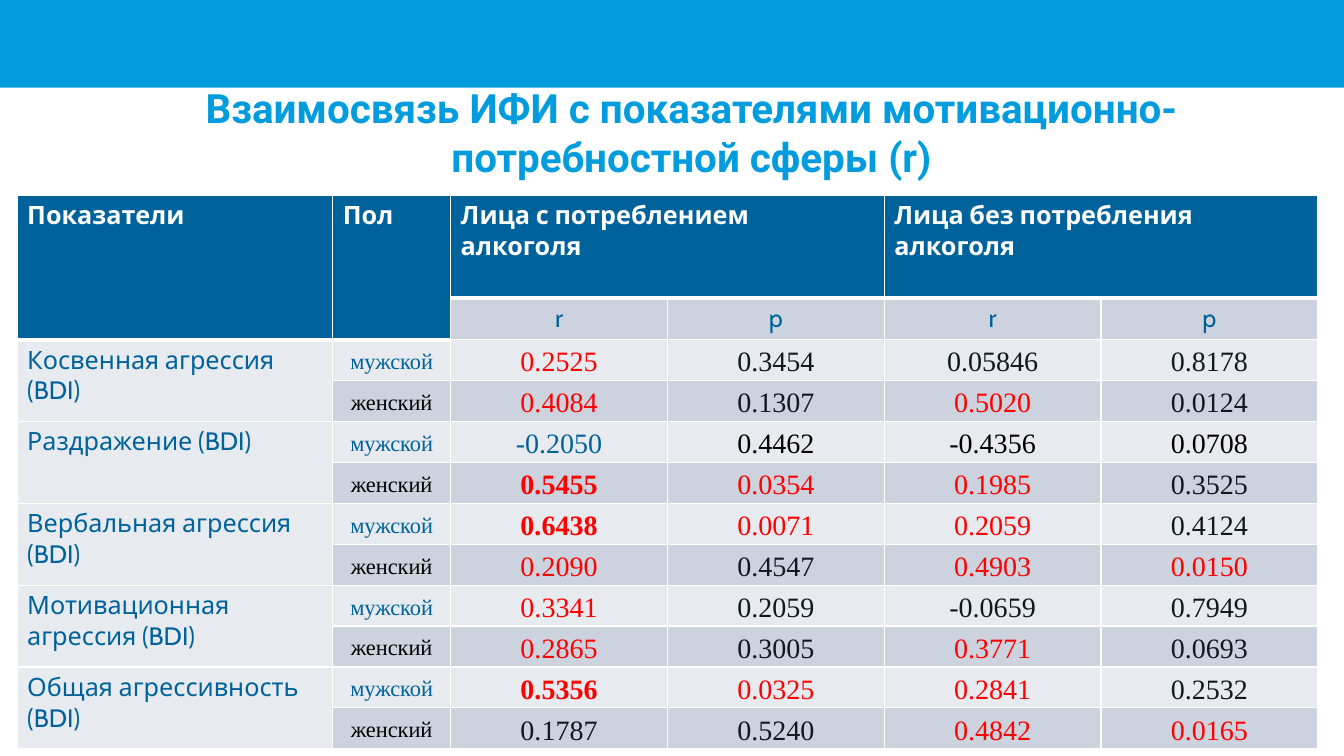
from lxml.etree import SubElement
from pptx import Presentation
from pptx.dml.color import RGBColor
from pptx.enum.shapes import MSO_SHAPE
from pptx.enum.text import MSO_ANCHOR, PP_ALIGN
from pptx.oxml.ns import qn
from pptx.util import Inches, Pt

SKY = RGBColor(0x00, 0x9C, 0xDE)
NAVY = RGBColor(0x00, 0x62, 0x9B)
WHITE = RGBColor(0xFF, 0xFF, 0xFF)
LIGHT = RGBColor(0xE7, 0xEA, 0xEF)
GREY = RGBColor(0xCC, 0xD3, 0xDE)
RED = RGBColor(0xFF, 0x00, 0x00)
DARK = RGBColor(0x10, 0x18, 0x20)
BLACK = RGBColor(0x00, 0x00, 0x00)

VALUE_COLORS = {"R": RED, "B": RED, "D": DARK, "K": BLACK, "N": NAVY}
COLUMN_WIDTHS = [3.13, 1.17] + [2.15] * 4
ROW_HEIGHTS = [1.02, 0.41] + [0.406] * 10
HEADERS = [
    ("Показатели", 0, (1, 0)),
    ("Пол", 1, (1, 1)),
    ("Лица с потреблением алкоголя", 2, (0, 3)),
    ("Лица без потребления алкоголя", 4, (0, 5)),
]
INDICATORS = [
    ("Косвенная агрессия (BDI)",
     "0.2525 0.3454 0.05846 0.8178", "RDDD",
     "0.4084 0.1307 0.5020 0.0124", "RDRD"),
    ("Раздражение (BDI)",
     "-0.2050 0.4462 -0.4356 0.0708", "NKKK",
     "0.5455 0.0354 0.1985 0.3525", "BRRD"),
    ("Вербальная агрессия (BDI)",
     "0.6438 0.0071 0.2059 0.4124", "BRRD",
     "0.2090 0.4547 0.4903 0.0150", "RDRR"),
    ("Мотивационная агрессия (BDI)",
     "0.3341 0.2059 -0.0659 0.7949", "RDDD",
     "0.2865 0.3005 0.3771 0.0693", "RDRD"),
    ("Общая агрессивность (BDI)",
     "0.5356 0.0325 0.2841 0.2532", "BRRD",
     "0.1787 0.5240 0.4842 0.0165", "DDRR"),
]


class SlideBuilder:
    heading_font = "Roboto"
    label_font = "Cabin"
    value_font = "Times New Roman"

    def __init__(self, slide):
        self.slide = slide

    def style(self, para, font, size, color, bold=False):
        for span in para.runs:
            span.font.name = font
            span.font.size = Pt(size)
            span.font.color.rgb = color
            span.font.bold = bold

    def band(self, left, top, width, height, color):
        shape = self.slide.shapes.add_shape(
            MSO_SHAPE.RECTANGLE, Inches(left), Inches(top), Inches(width), Inches(height))
        shape.shadow.inherit = False
        shape.fill.solid()
        shape.fill.fore_color.rgb = color
        shape.line.fill.background()

    def title(self, text, left, top, width, height):
        box = self.slide.shapes.add_textbox(
            Inches(left), Inches(top), Inches(width), Inches(height))
        frame = box.text_frame
        frame.word_wrap = True
        frame.vertical_anchor = MSO_ANCHOR.MIDDLE
        frame.text = text
        para = frame.paragraphs[0]
        para.alignment = PP_ALIGN.CENTER
        self.style(para, self.heading_font, 28.8, SKY, True)

    def table(self, left, top, widths, heights):
        frame = self.slide.shapes.add_table(
            len(heights), len(widths), Inches(left), Inches(top),
            Inches(sum(widths)), Inches(sum(heights)))
        table = frame.table
        table.first_row = False
        table.horz_banding = False
        for column, width in zip(table.columns, widths):
            column.width = Inches(width)
        for row, height in zip(table.rows, heights):
            row.height = Inches(height)
        return table

    def border(self, cell, bottom):
        properties = cell._tc.get_or_add_tcPr()
        for side, width in (("L", 1), ("R", 1), ("T", 1), ("B", bottom)):
            line = SubElement(properties, qn(f"a:ln{side}"), w=str(Pt(width)))
            fill = SubElement(line, qn("a:solidFill"))
            SubElement(fill, qn("a:srgbClr"), val=str(WHITE))

    def cell(self, cell, text, fill, color, bold=False, centered=False, bottom=1):
        self.border(cell, bottom)
        cell.fill.solid()
        cell.fill.fore_color.rgb = fill
        cell.text = text
        para = cell.text_frame.paragraphs[0]
        if centered:
            para.alignment = PP_ALIGN.CENTER
        self.style(para, self.label_font, 18, color, bold)

    def value_cell(self, cell, text, fill, color, size=20, bold=False):
        self.cell(cell, text, fill, color, centered=True)
        cell.vertical_anchor = MSO_ANCHOR.MIDDLE
        cell.margin_left = cell.margin_right = Inches(0.07)
        cell.margin_top = cell.margin_bottom = 0
        para = cell.text_frame.paragraphs[0]
        para.line_spacing = 1.15
        self.style(para, self.value_font, size, color, bold)


def main():
    deck = Presentation()
    deck.slide_width = Inches(13.33)
    deck.slide_height = Inches(7.5)
    page = SlideBuilder(deck.slides.add_slide(deck.slide_layouts[6]))

    page.band(0, 0, 13.33, 0.87, SKY)
    page.title("Взаимосвязь ИФИ с показателями мотивационно-потребностной сферы (r)",
               0.86, 0.86, 12, 0.9)

    table = page.table(0.17, 1.94, COLUMN_WIDTHS, ROW_HEIGHTS)
    for text, column, end in HEADERS:
        header = table.cell(0, column)
        header.merge(table.cell(*end))
        page.cell(header, text, NAVY, WHITE, bold=True, bottom=3)
        page.cell(table.cell(*end), "", NAVY, WHITE, bottom=3)
    for column, text in enumerate("rprp", start=2):
        page.cell(table.cell(1, column), text, GREY, NAVY, centered=True)

    for index, (name, men, men_codes, women, women_codes) in enumerate(INDICATORS):
        first = 2 + 2 * index
        label = table.cell(first, 0)
        label.merge(table.cell(first + 1, 0))
        page.cell(label, name, LIGHT, NAVY)
        groups = [
            ("мужской", men, men_codes, LIGHT, NAVY),
            ("женский", women, women_codes, GREY, BLACK),
        ]
        for row, (sex, values, codes, fill, color) in enumerate(groups, start=first):
            page.value_cell(table.cell(row, 1), sex, fill, color, size=16)
            for column, (value, code) in enumerate(zip(values.split(), codes), start=2):
                page.value_cell(table.cell(row, column), value, fill,
                                VALUE_COLORS[code], bold=code == "B")

    deck.save("out.pptx")


if __name__ == "__main__":
    main()
